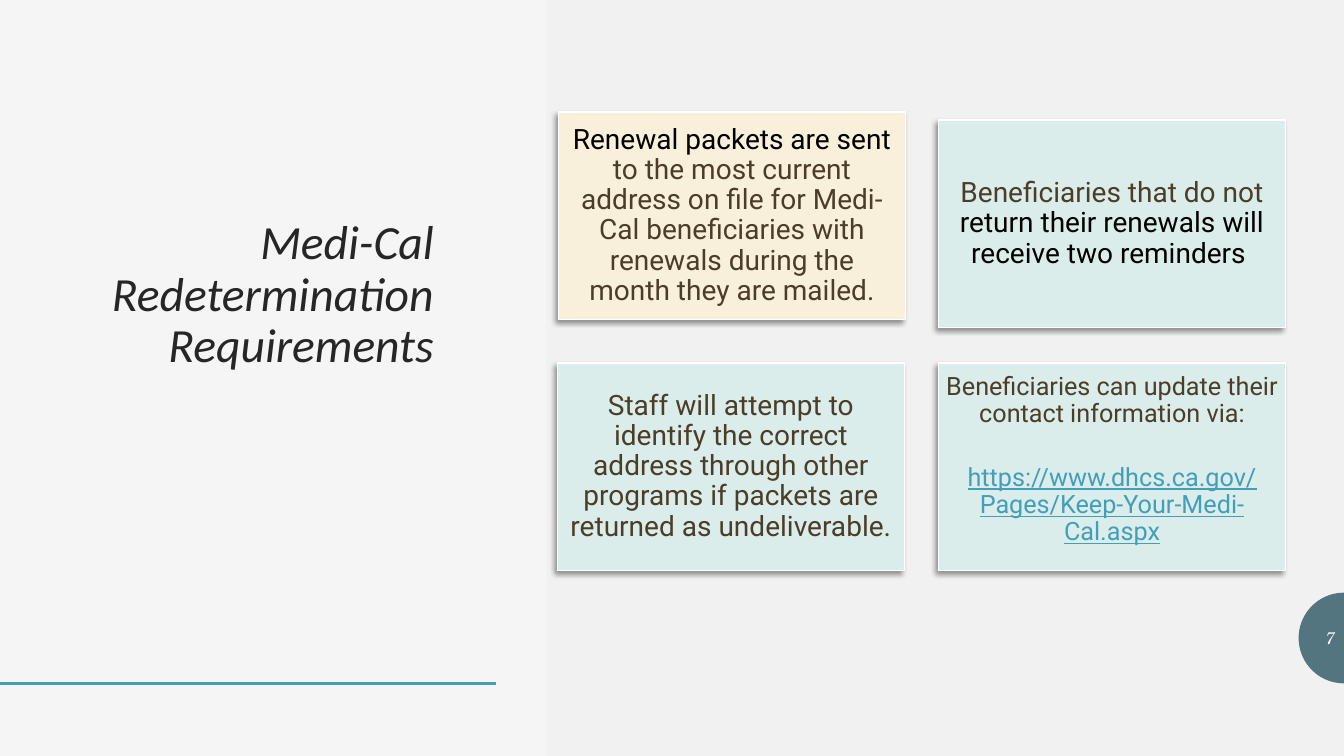
from dataclasses import dataclass
from math import cos, pi, sin

from lxml.etree import SubElement
from pptx import Presentation
from pptx.dml.color import RGBColor
from pptx.enum.shapes import MSO_CONNECTOR, MSO_SHAPE
from pptx.enum.text import MSO_ANCHOR, PP_ALIGN
from pptx.oxml import parse_xml
from pptx.oxml.ns import nsdecls, qn
from pptx.util import Inches, Pt

PAPER = RGBColor(0xF5, 0xF5, 0xF5)
PANEL = RGBColor(0xE9, 0xE7, 0xE9)
TEAL = RGBColor(0x22, 0x4F, 0x5C)
BLUE = RGBColor(0x43, 0x9E, 0xB7)
DARK = RGBColor(0x26, 0x26, 0x26)
BLACK = RGBColor(0, 0, 0)
BROWN = RGBColor(0x4B, 0x3D, 0x28)
WHITE = RGBColor(0xFF, 0xFF, 0xFF)
CREAM = RGBColor(0xF8, 0xF0, 0xDB)
MINT = RGBColor(0xDA, 0xED, 0xEB)

WIDTH, HEIGHT = 13.33, 7.5
SHADOW = (
    f'<a:effectLst {nsdecls("a")}><a:outerShdw blurRad="50800" dist="38100" '
    'dir="8100000" algn="tr" rotWithShape="0"><a:srgbClr val="000000">'
    '<a:alpha val="40000"/></a:srgbClr></a:outerShdw></a:effectLst>'
)


@dataclass
class Run:
    text: str
    color: RGBColor
    under: bool = False


@dataclass
class Card:
    left: float
    top: float
    fill: RGBColor
    paras: list[list[Run]]
    size: int = 20
    inset: float = 0.08
    anchor: MSO_ANCHOR = MSO_ANCHOR.MIDDLE
    gap: int = 0


CARDS = [
    Card(5.54, 1.11, CREAM, [[
        Run("Renewal packets are sent ", BLACK),
        Run("to the most current address on file for Medi-Cal beneficiaries "
            "with renewals during the month they are mailed.", BROWN),
    ]]),
    Card(9.31, 1.19, MINT, [[
        Run("Beneficiaries that do not ", BROWN),
        Run("return their renewals will receive two reminders ", BLACK),
    ]]),
    Card(5.53, 3.6, MINT, [[
        Run("Staff will attempt to identify the correct address through other "
            "programs if packets are returned as undeliverable.", BROWN),
    ]]),
    Card(9.31, 3.6, MINT, [
        [Run("Beneficiaries can update their contact information via:", BROWN)],
        [Run("https://www.dhcs.ca.gov/Pages/Keep-Your-Medi-Cal.aspx", BLUE, True)],
    ], 18, 0.07, MSO_ANCHOR.TOP, 26),
]


def add_card(slide, card: Card) -> None:
    box = slide.shapes.add_shape(
        MSO_SHAPE.RECTANGLE, Inches(card.left), Inches(card.top),
        Inches(3.44), Inches(2.06))
    box.fill.solid()
    box.fill.fore_color.rgb = card.fill
    box.line.color.rgb = WHITE
    box.line.width = Pt(1)
    box._element.spPr.append(parse_xml(SHADOW))
    frame = box.text_frame
    frame.word_wrap = True
    frame.vertical_anchor = card.anchor
    frame.margin_left = frame.margin_right = Inches(card.inset)
    top = 0.11 if card.anchor == MSO_ANCHOR.TOP else card.inset
    frame.margin_top = Inches(top)
    frame.margin_bottom = Inches(card.inset)
    for i, runs in enumerate(card.paras):
        para = frame.add_paragraph() if i else frame.paragraphs[0]
        para.alignment = PP_ALIGN.CENTER
        para.line_spacing = 0.9
        if i:
            para.space_before = Pt(card.gap)
        para.font.name = "Roboto"
        para.font.size = Pt(card.size)
        for item in runs:
            run = para.add_run()
            run.text = item.text
            run.font.color.rgb = item.color
            if item.under:
                run.font.underline = True


def add_label(slide, text: str, place: tuple[float, ...], font: str, size: int,
              color: RGBColor, anchor: MSO_ANCHOR, spacing: float) -> None:
    box = slide.shapes.add_textbox(*map(Inches, place))
    frame = box.text_frame
    frame.word_wrap = True
    frame.vertical_anchor = anchor
    para = frame.paragraphs[0]
    para.text = text
    para.alignment = PP_ALIGN.RIGHT
    para.line_spacing = spacing
    para.font.name = font
    para.font.size = Pt(size)
    para.font.italic = True
    para.font.color.rgb = color


def add_badge(slide, mid: float, radius: float) -> None:
    steps = 36
    points = [
        (Inches(WIDTH - radius * sin(pi * i / steps)),
         Inches(mid - radius * cos(pi * i / steps)))
        for i in range(steps + 1)
    ]
    form = slide.shapes.build_freeform(*points[0])
    form.add_line_segments(points[1:], close=True)
    badge = form.convert_to_shape()
    badge.shadow.inherit = False
    badge.fill.solid()
    badge.fill.fore_color.rgb = TEAL
    badge.line.fill.background()


def add_rule(slide) -> None:
    rule = slide.shapes.add_connector(
        MSO_CONNECTOR.STRAIGHT, 0, Inches(6.78), Inches(4.92), Inches(6.78))
    rule.line.color.rgb = BLUE
    rule.line.width = Pt(2)
    SubElement(rule._element.spPr, qn("a:effectLst"))


def add_panel(slide) -> None:
    panel = slide.shapes.add_shape(
        MSO_SHAPE.RECTANGLE, Inches(5.42), 0, Inches(WIDTH - 5.42), Inches(HEIGHT))
    panel.shadow.inherit = False
    panel.fill.solid()
    panel.fill.fore_color.rgb = PANEL
    panel.line.fill.background()
    color = panel._element.spPr.find(qn("a:solidFill"))[0]
    SubElement(color, qn("a:alpha")).set("val", "25000")


def main() -> None:
    deck = Presentation()
    deck.slide_width = Inches(WIDTH)
    deck.slide_height = Inches(HEIGHT)
    slide = deck.slides.add_slide(deck.slide_layouts[6])
    slide.background.fill.solid()
    slide.background.fill.fore_color.rgb = PAPER
    add_badge(slide, 6.33, 0.45)
    add_rule(slide)
    add_panel(slide)
    add_label(slide, "7", (12.89, 6.13, 0.45, 0.4), "TeX Gyre Schola", 12,
              PAPER, MSO_ANCHOR.MIDDLE, 1.0)
    add_label(slide, "Medi-Cal Redetermination Requirements",
              (0.58, 0.53, 3.82, 3.22), "Calibri", 34, DARK,
              MSO_ANCHOR.BOTTOM, 0.9)
    for card in CARDS:
        add_card(slide, card)
    deck.save("out.pptx")


if __name__ == "__main__":
    main()
